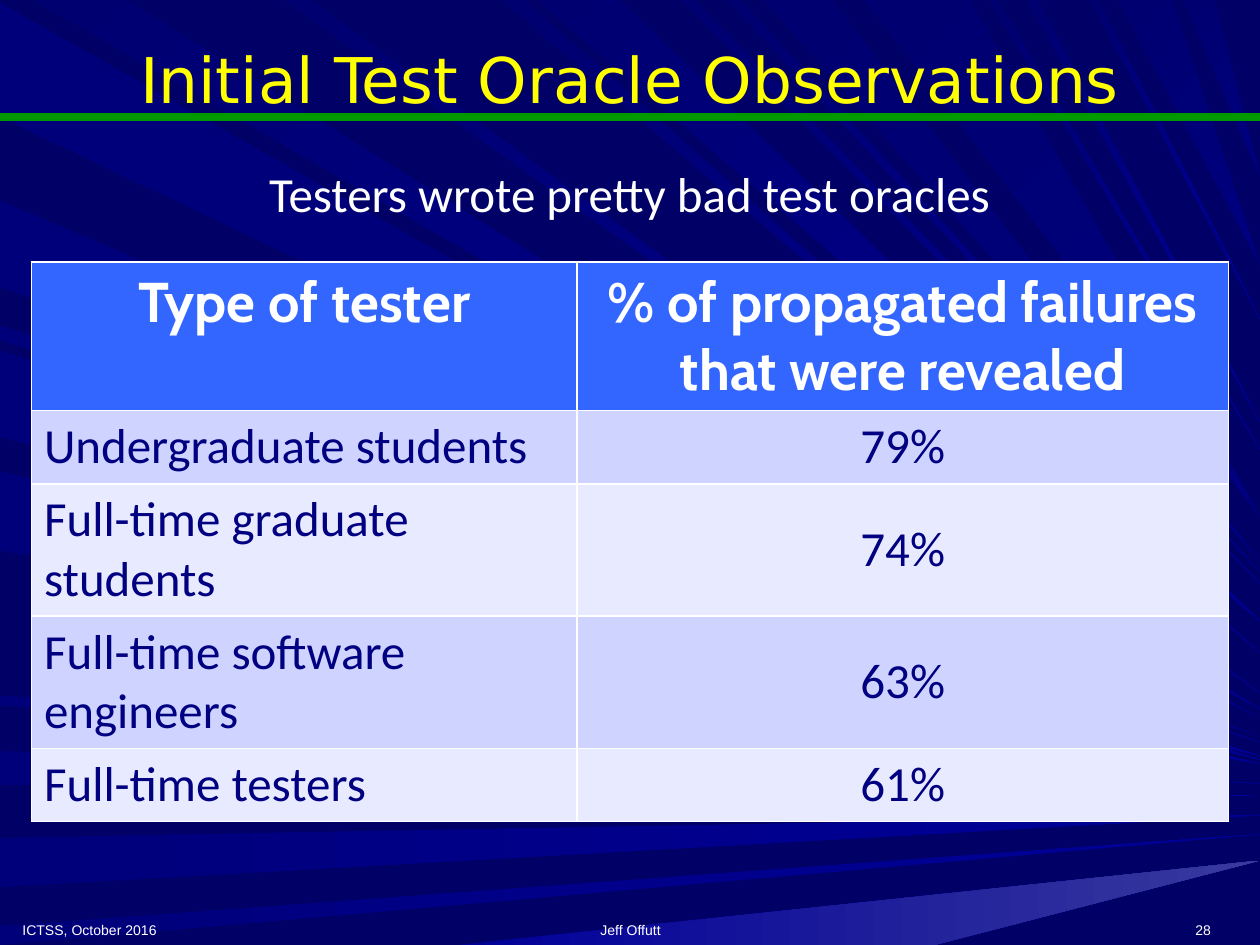
"""Build the test oracle slide with its ray backdrop and results table."""
from lxml import etree
from pptx import Presentation
from pptx.dml.color import RGBColor
from pptx.enum.shapes import MSO_CONNECTOR
from pptx.enum.text import MSO_ANCHOR, PP_ALIGN
from pptx.oxml.ns import qn
from pptx.util import Inches, Pt

LEFT, MID, RIGHT = PP_ALIGN.LEFT, PP_ALIGN.CENTER, PP_ALIGN.RIGHT
TOP, CENTER, BOTTOM = MSO_ANCHOR.TOP, MSO_ANCHOR.MIDDLE, MSO_ANCHOR.BOTTOM
STRAIGHT = MSO_CONNECTOR.STRAIGHT
BASE = RGBColor(0x00, 0x00, 0x66)
DEEP = RGBColor(0x00, 0x00, 0x70)
DIM = RGBColor(0x00, 0x00, 0x7B)
NAVY = RGBColor(0x00, 0x00, 0x80)
BLUE = RGBColor(0x00, 0x00, 0x99)
DUSK = RGBColor(0x39, 0x39, 0x9E)
GREEN = RGBColor(0x00, 0x99, 0x00)
YELLOW = RGBColor(0xFF, 0xFF, 0x00)
WHITE = RGBColor(0xFF, 0xFF, 0xFF)
HEAD = RGBColor(0x33, 0x66, 0xFF)
BANDS = [RGBColor(0xCE, 0xD3, 0xFF), RGBColor(0xE8, 0xEA, 0xFF)]

WIDE, HIGH = 10, 7.5
SIDE = [
    (0.02, 0.93, 5.7, NAVY), (5.96, 6.23, 6.32, BLUE), (6.65, 7.04, 6.47, BLUE),
    (7.35, 7.5, 6.62, BLUE), (2.58, 2.7, 5.89, BLUE), (1.59, 2.28, 5.85, NAVY),
    (2.78, 3.42, 6, BLUE), (3.74, 4.37, 6.06, BLUE), (5.52, 5.6, 6.22, BLUE),
    (2.83, 3.47, 6.03, BLUE),
]
ROOF = [
    (0.26, 1.01, 5.63, BLUE), (3.98, 4.16, 5.18, BLUE), (4.26, 4.92, 4.93, BLUE),
    (5.4, 5.52, 4.63, BLUE), (6.06, 6.61, 4.46, NAVY), (8.87, 9.3, 2.1, NAVY),
    (9.39, 9.64, 1.4, NAVY), (2.25, 2.47, 5.5, BLUE), (5.77, 5.88, 4.54, BLUE),
    (6.86, 7.7, 4.1, NAVY), (7.85, 7.92, 3.57, BLUE), (8.15, 8.24, 3.35, BLUE),
    (8.65, 8.72, 2.53, BLUE),
]
FLOOR = [(3.64, 7.42, 6.83, DUSK)]
ROWS = [
    ("Type of tester", "% of propagated failures that were revealed", 1.18),
    ("Undergraduate students", "79%", 0.58),
    ("Full-time graduate students", "74%", 1.05),
    ("Full-time software engineers", "63%", 1.05),
    ("Full-time testers", "61%", 0.58),
]


def place(shape, left, top, width, height):
    shape.left, shape.top = Inches(left), Inches(top)
    shape.width, shape.height = Inches(width), Inches(height)


def write(frame, text, font, size, color, align, bold=False):
    para = frame.paragraphs[0]
    para.alignment = align
    run = para.add_run()
    run.text = text
    run.font.name, run.font.size, run.font.bold = font, Pt(size), bold
    run.font.color.rgb = color


deck = Presentation()
deck.slide_width, deck.slide_height = Inches(WIDE), Inches(HIGH)
slide = deck.slides.add_slide(deck.slide_layouts[1])
shapes = slide.shapes
back = slide.background.fill
back.solid()
back.fore_color.rgb = BASE

for rays, edge, start, angle in [
    (SIDE, None, DIM, 0), (ROOF, 0, DEEP, 45), (FLOOR, HIGH, BLUE, 0),
]:
    for near, far, tip, end in rays:
        ends = [(0, n) if edge is None else (n, edge) for n in (near, far)]
        spots = [(Inches(x), Inches(y)) for x, y in ends + [(WIDE, tip)]]
        pen = shapes.build_freeform(*spots[0], scale=1.0)
        pen.add_line_segments(spots[1:], close=True)
        ray = pen.convert_to_shape()
        ray.shadow.inherit = False
        ray.line.fill.background()
        ray.fill.gradient()
        ray.fill.gradient_angle = 360 - angle
        for spot, (stop, color) in enumerate(zip(ray.fill.gradient_stops, (start, end))):
            stop.color.rgb = color
            stop.position = spot

rule = shapes.add_connector(STRAIGHT, 0, Inches(0.93), Inches(WIDE), Inches(0.93))
rule.line.color.rgb = GREEN
rule.line.width = Pt(4.5)
etree.SubElement(rule._element.spPr, qn("a:effectLst"))

title, body = shapes.title, slide.placeholders[1]
for holder in (title, body):
    shapes._spTree.append(holder._element)
place(title, 0.08, 0, 9.84, 1.25)
title.text_frame.vertical_anchor = CENTER
write(title.text_frame, "Initial Test Oracle Observations", "DejaVu Sans", 36, YELLOW, MID)

place(body, 0.08, 1.25, 9.83, 5.92)
para = body.text_frame.paragraphs[0]
props = para._p.get_or_add_pPr()
props.set("marL", "0")
props.set("indent", "0")
etree.SubElement(props, qn("a:buNone"))
para.space_before = Pt(0)
write(body.text_frame, "Testers wrote pretty bad test oracles", "Calibri", 28, WHITE, MID)

for text, left, width, align in [
    ("ICTSS, October 2016", 0.08, 2.33, LEFT),
    ("Jeff Offutt", 3.42, 3.17, MID),
    ("28", 7.58, 2.13, RIGHT),
]:
    foot = shapes.add_textbox(Inches(left), Inches(7.17), Inches(width), Inches(0.33))
    foot.text_frame.word_wrap = True
    foot.text_frame.vertical_anchor = BOTTOM
    write(foot.text_frame, text, "Arial", 8, WHITE, align)

table = shapes.add_table(
    len(ROWS), 2, Inches(0.25), Inches(2.08), Inches(9.5), Inches(4.44)).table
for col, width in zip(table.columns, (4.33, 5.17)):
    col.width = Inches(width)
for i, (*texts, height) in enumerate(ROWS):
    table.rows[i].height = Inches(height)
    for j, text in enumerate(texts):
        cell = table.cell(i, j)
        props = cell._tc.get_or_add_tcPr()
        for side in ("a:lnL", "a:lnR", "a:lnT", "a:lnB"):
            line = etree.SubElement(props, qn(side), w=str(Pt(1)))
            paint = etree.SubElement(line, qn("a:solidFill"))
            etree.SubElement(paint, qn("a:srgbClr"), val=str(WHITE))
        cell.fill.solid()
        cell.fill.fore_color.rgb = BANDS[(i - 1) % 2] if i else HEAD
        cell.vertical_anchor = CENTER if i else TOP
        if i:
            write(cell.text_frame, text, "Calibri", 28, NAVY, MID if j else LEFT)
        else:
            write(cell.text_frame, text, "Cabin", 32, WHITE, MID, True)

deck.save("out.pptx")
